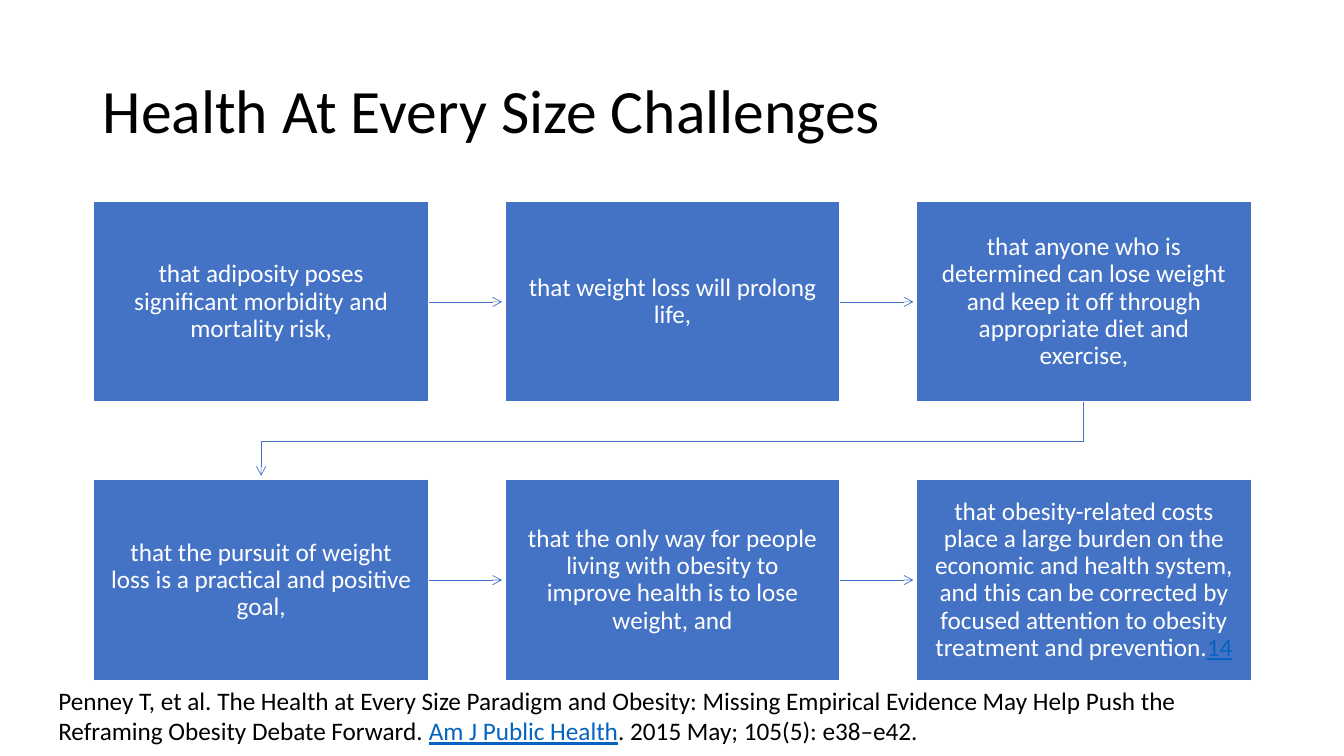
from dataclasses import dataclass

from lxml import etree
from pptx import Presentation
from pptx.dml.color import RGBColor as RGB
from pptx.enum.shapes import MSO_CONNECTOR as CONN, MSO_SHAPE as SHAPE
from pptx.enum.text import MSO_ANCHOR as ANCHOR, PP_ALIGN as ALIGN
from pptx.oxml.ns import qn
from pptx.util import Inches, Pt


@dataclass(frozen=True)
class Theme:
    font: str = "Calibri"
    title_size: float = 44
    body_size: float = 18
    ink: RGB = RGB(0, 0, 0)
    paper: RGB = RGB(255, 255, 255)
    accent: RGB = RGB(0x44, 0x72, 0xC4)
    link: RGB = RGB(0x05, 0x63, 0xC1)
    box_line: float = 1
    arrow_line: float = 0.5


class SlideBuilder:
    def __init__(self, slide, theme):
        self.shapes = slide.shapes
        self.theme = theme

    def add_runs(self, tf, runs, size, color, spacing=1.0, align=ALIGN.LEFT):
        """Fill one paragraph from (text, is_link) pairs."""
        tf.word_wrap = True
        p = tf.paragraphs[0]
        p.alignment, p.line_spacing = align, spacing
        for text, is_link in runs:
            r = p.add_run()
            r.text = text
            r.font.name, r.font.size = self.theme.font, Pt(size)
            r.font.color.rgb = self.theme.link if is_link else color
            r.font.underline = is_link

    def text(self, x, y, w, h, runs, size, spacing=1.0, anchor=ANCHOR.TOP):
        sp = self.shapes.add_textbox(Inches(x), Inches(y), Inches(w), Inches(h))
        sp.text_frame.vertical_anchor = anchor
        self.add_runs(sp.text_frame, runs, size, self.theme.ink, spacing)

    def box(self, x, y, w, h, runs):
        sp = self.shapes.add_shape(SHAPE.RECTANGLE, Inches(x), Inches(y), Inches(w), Inches(h))
        sp.shadow.inherit = False
        sp.fill.solid()
        sp.fill.fore_color.rgb = self.theme.accent
        sp.line.color.rgb = self.theme.paper
        sp.line.width = Pt(self.theme.box_line)
        tf = sp.text_frame
        tf.margin_left = tf.margin_right = Inches(0.16)
        tf.margin_top = tf.margin_bottom = Inches(0.17)
        tf.vertical_anchor = ANCHOR.MIDDLE
        self.add_runs(tf, runs, self.theme.body_size, self.theme.paper, 0.9, ALIGN.CENTER)
        return sp

    def arrow_line(self, sp):
        sp.line.color.rgb = self.theme.accent
        sp.line.width = Pt(self.theme.arrow_line)
        ln = sp._element.spPr.find(qn("a:ln"))
        etree.SubElement(ln, qn("a:tailEnd"), type="arrow")

    def arrow_from(self, box, length):
        """Draw an arrow rightwards from the middle of the box's right side."""
        x, y = box.left + box.width, box.top + box.height // 2
        cx = self.shapes.add_connector(CONN.STRAIGHT, x, y, x + Inches(length), y)
        cx.begin_connect(box, 3)
        self.arrow_line(cx)
        etree.SubElement(cx._element.spPr, qn("a:effectLst"))

    def bent_arrow(self, points):
        start, *rest = [(Inches(x), Inches(y)) for x, y in points]
        builder = self.shapes.build_freeform(*start)
        builder.add_line_segments(rest, close=False)
        sp = builder.convert_to_shape()
        sp.shadow.inherit = False
        sp.fill.background()
        self.arrow_line(sp)


CLAIMS = [
    [("that adiposity poses significant morbidity and mortality risk,", False)],
    [("that weight loss will prolong life,", False)],
    [("that anyone who is determined can lose weight and keep it off through "
      "appropriate diet and exercise,", False)],
    [("that the pursuit of weight loss is a practical and positive goal,", False)],
    [("that the only way for people living with obesity to improve health is to "
      "lose weight, and", False)],
    [("that obesity-related costs place a large burden on the economic and health "
      "system, and this can be corrected by focused attention to obesity treatment "
      "and prevention.", False), ("14", True)],
]
CITATION = [
    ("Penney T, et al. The Health at Every Size Paradigm and Obesity: Missing Empirical "
     "Evidence May Help Push the Reframing Obesity Debate Forward. ", False),
    ("Am J Public Health", True),
    (". 2015 May; 105(5): e38–e42.", False),
]
COLUMNS = 3
LEFT, TOP = 0.93, 2.0
BOX_W, BOX_H = 3.32, 1.99
STEP_X, STEP_Y = 4.08, 2.76
ARROW_LENGTH = 0.73


def main():
    prs = Presentation()
    prs.slide_width, prs.slide_height = Inches(13.33), Inches(7.5)
    theme = Theme()
    s = SlideBuilder(prs.slides.add_slide(prs.slide_layouts[6]), theme)

    s.text(0.92, 0.4, 11.5, 1.45, [("Health At Every Size Challenges", False)],
           theme.title_size, 0.9, ANCHOR.MIDDLE)

    for i, claim in enumerate(CLAIMS):
        row, col = divmod(i, COLUMNS)
        box = s.box(LEFT + col * STEP_X, TOP + row * STEP_Y, BOX_W, BOX_H, claim)
        if col < COLUMNS - 1:
            s.arrow_from(box, ARROW_LENGTH)

    first_x = LEFT + BOX_W / 2
    last_x = first_x + (COLUMNS - 1) * STEP_X
    row_end = TOP + BOX_H
    bend_y = (row_end + TOP + STEP_Y) / 2
    s.bent_arrow([(last_x, row_end), (last_x, bend_y), (first_x, bend_y),
                  (first_x, row_end + ARROW_LENGTH)])

    s.text(0.48, 6.75, 12.37, 0.71, CITATION, theme.body_size)
    prs.save("out.pptx")


if __name__ == "__main__":
    main()
